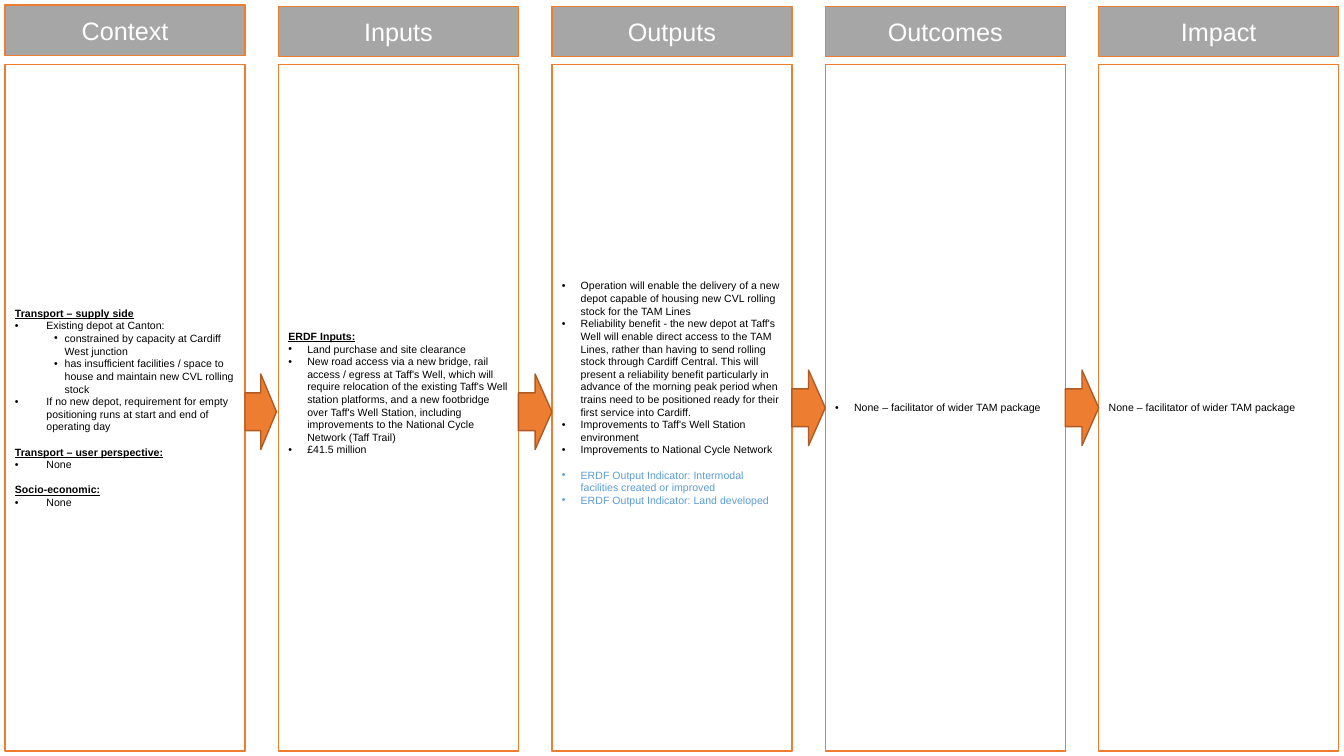
from dataclasses import dataclass

from lxml.etree import SubElement
from pptx import Presentation
from pptx.dml.color import RGBColor
from pptx.enum.shapes import MSO_SHAPE
from pptx.enum.text import MSO_ANCHOR, PP_ALIGN
from pptx.oxml.ns import qn
from pptx.shapes.autoshape import Shape
from pptx.slide import Slide
from pptx.text.text import TextFrame
from pptx.util import Pt

ORANGE, DARK_ORANGE, GREY = "ED7D31", "AF5C24", "A6A6A6"
WHITE, BLACK, BLUE = "FFFFFF", "000000", "5B9BD5"
FONT = "Arial"
COLUMN_LEFT, COLUMN_WIDTH, COLUMN_PITCH = 3.6, 171.4, 195.3
BODY_TOP, BODY_HEIGHT = 46.1, 490.3
HEADER_HEIGHT, ARROW_HEIGHT = 36, 54
BODY_SIZE, HEADER_SIZE = 7.5, 18
PARAGRAPH_GAP = 9


@dataclass(frozen=True)
class Line:
    text: str
    margin: float = 0
    hanging: float = 0
    level: int = 0
    heading: bool = False
    gap: float = 0
    color: str = BLACK


@dataclass(frozen=True)
class Column:
    title: str
    lines: list[Line]
    header_top: float = 4.6
    bottom_inset: float = 3.6


@dataclass(frozen=True)
class Arrow:
    top: float
    width: float


def heading(text: str, gap: float = 0) -> Line:
    return Line(text, heading=True, gap=gap)


def bullet(text: str, gap: float = 0, color: str = BLACK) -> Line:
    return Line(text, 13.5, 13.5, gap=gap, color=color)


def wide_bullet(text: str, level: int = 0) -> Line:
    return Line(text, 22.5, 22.5, level)


def sub_bullet(text: str) -> Line:
    return Line(text, 35.5, 7.5, 1)


COLUMNS = [
    Column("Context", [
        heading("Transport – supply side"),
        wide_bullet("Existing depot at Canton:"),
        sub_bullet("constrained by capacity at Cardiff West junction"),
        sub_bullet("has insufficient facilities / space to house and maintain "
                   "new CVL rolling stock"),
        wide_bullet("If no new depot, requirement for empty positioning runs "
                    "at start and end of operating day", 1),
        heading("Transport – user perspective:", PARAGRAPH_GAP),
        wide_bullet("None"),
        heading("Socio-economic:", PARAGRAPH_GAP),
        wide_bullet("None"),
    ], header_top=3.6),
    Column("Inputs", [
        heading("ERDF Inputs:"),
        bullet("Land purchase and site clearance"),
        bullet("New road access via a new bridge, rail access / egress at Taff's Well, "
               "which will require relocation of the existing Taff's Well station "
               "platforms, and a new footbridge over Taff's Well Station, including "
               "improvements to the National Cycle Network (Taff Trail)"),
        bullet("£41.5 million"),
    ], bottom_inset=24.6),
    Column("Outputs", [
        bullet("Operation will enable the delivery of a new depot capable of housing "
               "new CVL rolling stock for the TAM Lines"),
        bullet("Reliability benefit - the new depot at Taff's Well will enable direct "
               "access to the TAM Lines, rather than having to send rolling stock "
               "through Cardiff Central. This will present a reliability benefit "
               "particularly in advance of the morning peak period when trains need "
               "to be positioned ready for their first service into Cardiff."),
        bullet("Improvements to Taff's Well Station environment"),
        bullet("Improvements to National Cycle Network"),
        bullet("ERDF Output Indicator: Intermodal facilities created or improved",
               PARAGRAPH_GAP, BLUE),
        bullet("ERDF Output Indicator: Land developed", color=BLUE),
    ], bottom_inset=24.6),
    Column("Outcomes", [bullet("None – facilitator of wider TAM package")]),
    Column("Impact", [Line("None – facilitator of wider TAM package")]),
]

ARROWS = [Arrow(267.1, 22.5), Arrow(267.1, 23.9), Arrow(264.3, 23.9), Arrow(264.3, 23.9)]


def rgb(color: str) -> RGBColor:
    return RGBColor.from_string(color)


def column_left(index: int) -> float:
    return COLUMN_LEFT + index * COLUMN_PITCH


def add_block(slide: Slide, preset: MSO_SHAPE, left: float, top: float, width: float,
              height: float, fill: str, outline: str) -> Shape:
    shape = slide.shapes.add_shape(preset, Pt(left), Pt(top), Pt(width), Pt(height))
    shape.shadow.inherit = False
    shape.fill.solid()
    shape.fill.fore_color.rgb = rgb(fill)
    shape.line.color.rgb = rgb(outline)
    shape.line.width = Pt(1)
    return shape


def write_line(frame: TextFrame, index: int, line: Line, size: float,
               alignment: PP_ALIGN) -> None:
    paragraph = frame.add_paragraph() if index else frame.paragraphs[0]
    paragraph_format = {"alignment": alignment, "level": line.level,
                        "space_before": Pt(line.gap)}
    for name, value in paragraph_format.items():
        setattr(paragraph, name, value)
    if line.hanging:
        properties = paragraph._p.get_or_add_pPr()
        properties.set("marL", str(Pt(line.margin)))
        properties.set("indent", str(-Pt(line.hanging)))
        SubElement(properties, qn("a:buFont")).set("typeface", FONT)
        SubElement(properties, qn("a:buChar")).set("char", "•")
    run = paragraph.add_run()
    run.text = line.text
    font_format = {"name": FONT, "size": Pt(size), "bold": line.heading,
                   "underline": line.heading}
    for name, value in font_format.items():
        setattr(run.font, name, value)
    run.font.color.rgb = rgb(line.color)


def write_text(shape: Shape, lines: list[Line], size: float, alignment: PP_ALIGN,
               bottom_inset: float = 3.6) -> None:
    frame = shape.text_frame
    frame_format = {"word_wrap": True, "vertical_anchor": MSO_ANCHOR.MIDDLE,
                    "margin_left": Pt(7.2), "margin_right": Pt(7.2),
                    "margin_top": Pt(3.6), "margin_bottom": Pt(bottom_inset)}
    for name, value in frame_format.items():
        setattr(frame, name, value)
    for index, line in enumerate(lines):
        write_line(frame, index, line, size, alignment)


def add_body(slide: Slide, index: int, column: Column) -> None:
    body = add_block(slide, MSO_SHAPE.RECTANGLE, column_left(index), BODY_TOP,
                     COLUMN_WIDTH, BODY_HEIGHT, WHITE, ORANGE)
    write_text(body, column.lines, BODY_SIZE, PP_ALIGN.LEFT, column.bottom_inset)


def add_header(slide: Slide, index: int, column: Column) -> None:
    header = add_block(slide, MSO_SHAPE.RECTANGLE, column_left(index), column.header_top,
                       COLUMN_WIDTH, HEADER_HEIGHT, GREY, ORANGE)
    write_text(header, [Line(column.title, color=WHITE)], HEADER_SIZE, PP_ALIGN.CENTER)


def main() -> None:
    presentation = Presentation()
    presentation.slide_width = Pt(960)
    presentation.slide_height = Pt(540)
    slide = presentation.slides.add_slide(presentation.slide_layouts[6])
    for index, column in enumerate(COLUMNS):
        add_body(slide, index, column)
        add_header(slide, index, column)
    for index, arrow in enumerate(ARROWS):
        add_block(slide, MSO_SHAPE.RIGHT_ARROW, column_left(index) + COLUMN_WIDTH,
                  arrow.top, arrow.width, ARROW_HEIGHT, ORANGE, DARK_ORANGE)
    presentation.save("out.pptx")


if __name__ == "__main__":
    main()
